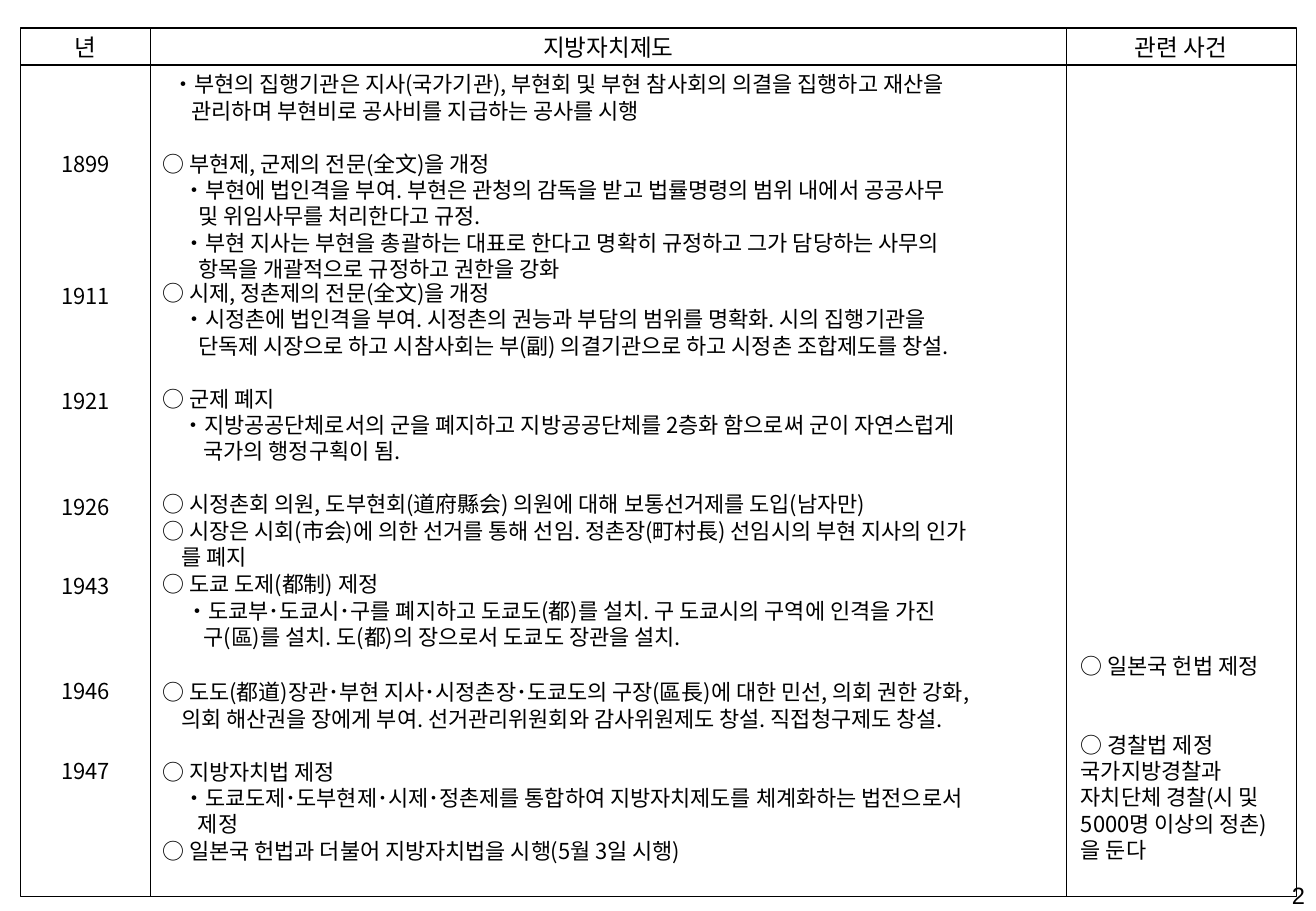
import pptx
import pptx.util
import pptx.dml.color
import pptx.enum.shapes
import pptx.enum.text
import pptx.oxml.ns
import lxml.etree

Pt = pptx.util.Pt
ALIGN = pptx.enum.text.PP_ALIGN
ANCHOR = pptx.enum.text.MSO_ANCHOR
RECT = pptx.enum.shapes.MSO_SHAPE.RECTANGLE
NOTO = "Noto Sans CJK KR"
PITCH = 15.64

deck = pptx.Presentation()
deck.slide_width = Pt(780)
deck.slide_height = Pt(540)
slide = deck.slides.add_slide(deck.slide_layouts[6])


def color(code):
    return pptx.dml.color.RGBColor.from_string(code)


def write(shape, lines, align=ALIGN.LEFT, face=NOTO, size=13, pitch=PITCH):
    frame = shape.text_frame
    frame.word_wrap = True
    frame.vertical_anchor = ANCHOR.TOP if pitch else ANCHOR.MIDDLE
    for index, (gap, indent, text) in enumerate(lines):
        para = frame.paragraphs[0] if index == 0 else frame.add_paragraph()
        para.text = text
        para.alignment = align
        if pitch:
            para.line_spacing = Pt(pitch)
            para.space_before = Pt(gap * pitch)
        para.font.size = Pt(size)
        para.font.color.rgb = color("000000")
        para.font.name = face
        props = para._p.pPr
        props.set("marL", str(Pt(indent)))
        base = props.find(pptx.oxml.ns.qn("a:defRPr"))
        lxml.etree.SubElement(base, pptx.oxml.ns.qn("a:ea"), typeface=NOTO)


columns = [
    ("년", "Calibri", 12, 77.3),
    ("지방자치제도", "Calibri", 89.3, 542.7),
    ("관련 사건", NOTO, 632, 136.3),
]
cells = []
for title, face, left, width in columns:
    for top, height in [(16.6, 22.2), (38.5, 492.8)]:
        cell = slide.shapes.add_shape(RECT, Pt(left), Pt(top), Pt(width), Pt(height))
        cell.shadow.inherit = False
        cell.fill.background()
        cell.line.color.rgb = color("000000")
        cell.line.width = Pt(0.75)
        cells.append(cell)
    head = cells[-2]
    head.fill.solid()
    head.fill.fore_color.rgb = color("FFFFFF")
    write(head, [(0, 0, title)], ALIGN.CENTER, face, 14, None)

years = [(0, "1899"), (4, "1911"), (3, "1921"), (3, "1926"),
         (2, "1943"), (3, "1946"), (2, "1947")]
cells[1].text_frame.margin_top = Pt(3.6 + 3 * PITCH)
write(cells[1], [(gap, 0, year) for gap, year in years], ALIGN.CENTER)

blocks = [
    (89.3, 38.5, 542.7, 145, [
        (0, 5.8, "・부현의 집행기관은 지사(국가기관), 부현회 및 부현 참사회의 의결을 집행하고 재산을"),
        (0, 17.2, "관리하며 부현비로 공사비를 지급하는 공사를 시행"),
        (1, 0, "○ 부현제, 군제의 전문(全文)을 개정"),
        (0, 12.3, "・부현에 법인격을 부여. 부현은 관청의 감독을 받고 법률명령의 범위 내에서 공공사무"),
        (0, 21, "및 위임사무를 처리한다고 규정."),
        (0, 12.3, "・부현 지사는 부현을 총괄하는 대표로 한다고 명확히 규정하고 그가 담당하는 사무의"),
        (0, 21, "항목을 개괄적으로 규정하고 권한을 강화"),
    ]),
    (89.3, 162.2, 542.7, 153, [
        (0, 0, "○ 시제, 정촌제의 전문(全文)을 개정"),
        (0, 12.3, "・시정촌에 법인격을 부여. 시정촌의 권능과 부담의 범위를 명확화. 시의 집행기관을"),
        (0, 21, "단독제 시장으로 하고 시참사회는 부(副) 의결기관으로 하고 시정촌 조합제도를 창설."),
        (1, 0, "○ 군제 폐지"),
        (0, 11.7, "・지방공공단체로서의 군을 폐지하고 지방공공단체를 2층화 함으로써 군이 자연스럽게"),
        (0, 24.3, "국가의 행정구획이 됨."),
        (1, 0, "○ 시정촌회 의원, 도부현회(道府縣会) 의원에 대해 보통선거제를 도입(남자만)"),
        (0, 0, "○ 시장은 시회(市会)에 의한 선거를 통해 선임. 정촌장(町村長) 선임시의 부현 지사의 인가"),
        (0, 11, "를 폐지"),
    ]),
    (89.3, 334.8, 544.3, 54, [
        (0, 0, "○ 도쿄 도제(都制) 제정"),
        (0, 14, "・도쿄부･도쿄시･구를 폐지하고 도쿄도(都)를 설치. 구 도쿄시의 구역에 인격을 가진"),
        (0, 24.3, "구(區)를 설치. 도(都)의 장으로서 도쿄도 장관을 설치."),
    ]),
    (89.3, 398.9, 544.3, 116.6, [
        (0, 0, "○ 도도(都道)장관･부현 지사･시정촌장･도쿄도의 구장(區長)에 대한 민선, 의회 권한 강화,"),
        (0, 11, "의회 해산권을 장에게 부여. 선거관리위원회와 감사위원제도 창설. 직접청구제도 창설."),
        (1, 0, "○ 지방자치법 제정"),
        (0, 12.3, "・도쿄도제･도부현제･시제･정촌제를 통합하여 지방자치제도를 체계화하는 법전으로서"),
        (0, 21, "제정"),
        (0, 0, "○ 일본국 헌법과 더불어 지방자치법을 시행(5월 3일 시행)"),
    ]),
    (633.6, 383, 136.3, 132.5, [
        (0, 0, "○ 일본국 헌법 제정"),
        (2, 0, "○ 경찰법 제정"),
        (0, 0, "국가지방경찰과\v자치단체 경찰(시 및\v5000명 이상의 정촌)\v을 둔다"),
    ]),
]
for left, top, width, height, lines in blocks:
    block = slide.shapes.add_textbox(Pt(left), Pt(top), Pt(width), Pt(height))
    write(block, lines)

number = slide.shapes.add_textbox(Pt(598.3), Pt(521.3), Pt(182.2), Pt(18.7))
write(number, [(0, 0, "2")], ALIGN.RIGHT, "Arial", 14, None)

deck.save("out.pptx")
